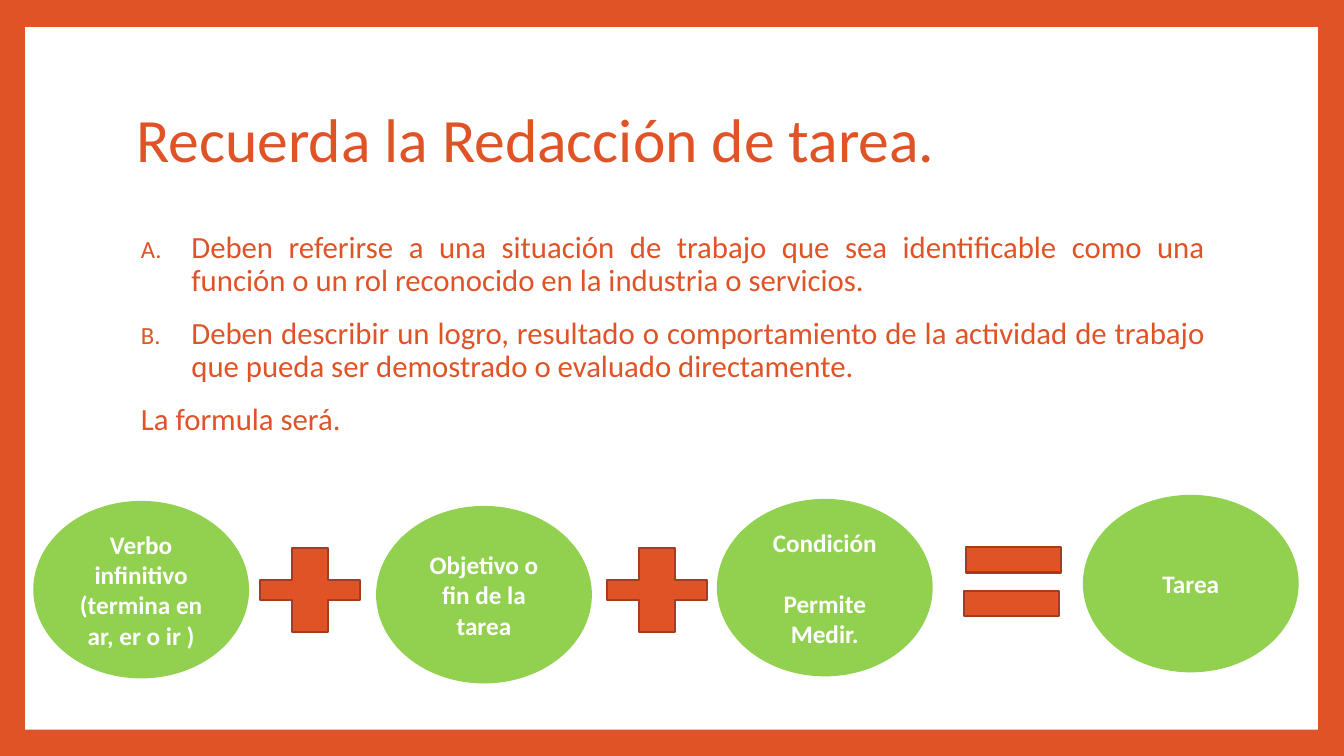
from lxml import etree
from pptx import Presentation
from pptx.dml.color import RGBColor
from pptx.enum.shapes import MSO_SHAPE
from pptx.enum.text import MSO_ANCHOR, PP_ALIGN
from pptx.oxml.ns import qn
from pptx.util import Inches, Pt

ORANGE = RGBColor(0xDF, 0x53, 0x27)
RUST = RGBColor(0xA5, 0x3D, 0x1D)
GREEN = RGBColor(0x92, 0xD0, 0x50)
WHITE = RGBColor(0xFF, 0xFF, 0xFF)
FONT = "Calibri"

# Content
TITLE = "Recuerda la Redacción de tarea."
RULES = [
    "Deben referirse a una situación de trabajo que sea identificable como "
    "una función o un rol reconocido en la industria o servicios.",
    "Deben describir un logro, resultado o comportamiento de la actividad de "
    "trabajo que pueda ser demostrado o evaluado directamente.",
]
CLOSING = "La formula será."
TERMS = [  # left, top, paragraphs
    (0.34, 4.98, ["Verbo infinitivo (termina en ar, er o ir )"]),
    (3.74, 5.03, ["Objetivo o fin de la tarea"]),
    (7.12, 4.96, ["Condición", "Permite Medir."]),
    (10.75, 4.92, ["Tarea"]),
]
BARS = [(9.58, 5.43), (9.56, 5.86)]
PLUSES = [2.58, 6.02]

deck = Presentation()
deck.slide_width, deck.slide_height = Inches(13.33), Inches(7.5)
slide = deck.slides.add_slide(deck.slide_layouts[5])
shapes = slide.shapes


def add_part(kind, left, top, width, height, fill, line=None):
    part = shapes.add_shape(kind, Inches(left), Inches(top),
                            Inches(width), Inches(height))
    part.shadow.inherit = False
    part.fill.solid()
    part.fill.fore_color.rgb = fill
    if line is None:
        part.line.fill.background()
    else:
        part.line.color.rgb = line
        part.line.width = Pt(1.5)
    return part


def set_font(para, size, color, bold=False):
    font = para.font
    font.name, font.size, font.bold = FONT, Pt(size), bold
    font.color.rgb = color


def indent(para, left, first, letter=False):
    props = para._p.get_or_add_pPr()
    props.set("marL", str(Inches(left)))
    props.set("indent", str(Inches(first)))
    if letter:
        color = etree.Element(qn("a:buClr"))
        etree.SubElement(color, qn("a:srgbClr"), val=str(ORANGE))
        size = etree.Element(qn("a:buSzPct"), val="80000")
        mark = etree.Element(qn("a:buAutoNum"), type="alphaUcPeriod")
        at = props.find(qn("a:defRPr"))
        for item in (color, size, mark):
            at.addprevious(item)


# Orange frame around a white panel, behind the title
slide.background.fill.solid()
slide.background.fill.fore_color.rgb = ORANGE
panel = add_part(MSO_SHAPE.RECTANGLE, 0.25, 0.27, 12.82, 6.97, WHITE)
shapes.title._element.addprevious(panel._element)

# Title
title = shapes.title
title.left, title.top = Inches(1.25), Inches(0.67)
title.width, title.height = Inches(10.8), Inches(1.48)
title.text_frame.text = TITLE
title.text_frame.vertical_anchor = MSO_ANCHOR.MIDDLE
head = title.text_frame.paragraphs[0]
head.alignment = PP_ALIGN.LEFT
head.line_spacing = 0.9
set_font(head, 44, ORANGE)

# Lettered rules and closing line
body = shapes.add_textbox(Inches(1.25), Inches(2.25), Inches(10.8), Inches(2.4))
frame = body.text_frame
frame.word_wrap = True
frame.text = "\n".join(RULES + [CLOSING])
for i, para in enumerate(frame.paragraphs):
    para.alignment = PP_ALIGN.JUSTIFY
    para.line_spacing = 0.9
    para.space_before = Pt(14)
    set_font(para, 22, ORANGE)
    if i < len(RULES):
        indent(para, 0.55, -0.5, letter=True)
    else:
        indent(para, 0.05, 0)

# Terms of the formula
for left, top, lines in TERMS:
    oval = add_part(MSO_SHAPE.OVAL, left, top, 2.12, 1.74, GREEN, GREEN)
    frame = oval.text_frame
    frame.word_wrap = True
    frame.vertical_anchor = MSO_ANCHOR.MIDDLE
    frame.text = "\n".join(lines)
    for i, para in enumerate(frame.paragraphs):
        para.alignment = PP_ALIGN.CENTER
        para.space_before = Pt(22 if i else 0)
        set_font(para, 18, WHITE, bold=True)

# Equals and plus signs
for left, top in BARS:
    add_part(MSO_SHAPE.RECTANGLE, left, top, 0.94, 0.25, ORANGE, RUST)
for left in PLUSES:
    plus = add_part(MSO_SHAPE.CROSS, left, 5.44, 0.99, 0.83, ORANGE, RUST)
    plus.adjustments[0] = 0.384

deck.save("out.pptx")
